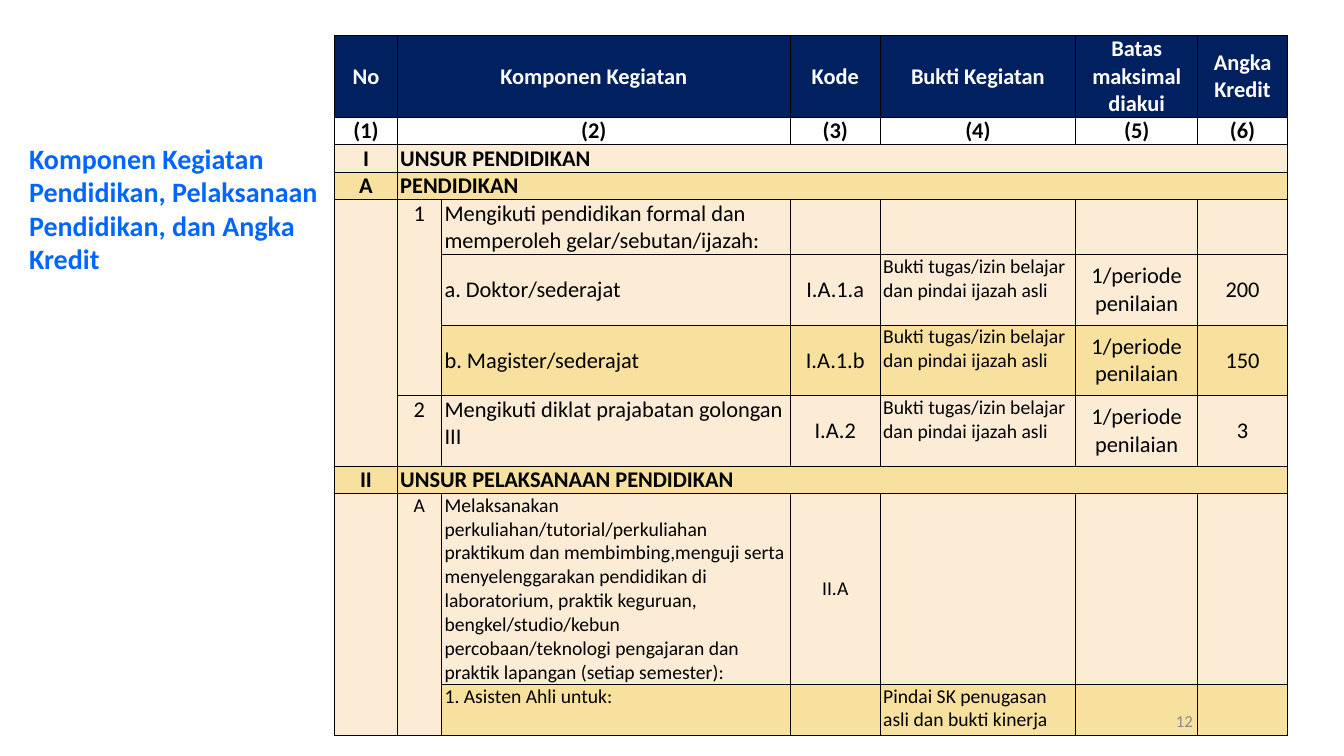
from dataclasses import dataclass, field

from lxml import etree
from pptx import Presentation
from pptx.dml.color import RGBColor
from pptx.enum.text import MSO_ANCHOR as Anchor, PP_ALIGN as Align
from pptx.oxml.ns import qn
from pptx.slide import Slide
from pptx.table import Table, _Cell as Cell
from pptx.text.text import _Paragraph as Paragraph
from pptx.util import Inches, Pt

NAVY, CREAM, GOLD = "002060", "FCECD5", "F8E19F"
BLACK, WHITE, BLUE, GRAY = "000000", "FFFFFF", "0066FF", "8C8C8C"
COLUMN_WIDTHS = [0.62, 0.44, 3.46, 0.89, 1.94, 1.21, 0.89]


@dataclass
class Entry:
    column: int
    text: str = ""
    size: int = 16
    bold: bool = False
    color: str = BLACK
    align: Align = Align.LEFT
    anchor: Anchor = Anchor.TOP
    row_span: int = 1
    column_span: int = 1


@dataclass
class Row:
    height: float
    fill: str
    entries: list[Entry] = field(default_factory=list)


@dataclass
class Label:
    text: str
    left: float
    top: float
    width: float
    height: float
    size: int
    color: str
    bold: bool
    align: Align
    anchor: Anchor


def rgb(value: str) -> RGBColor:
    return RGBColor.from_string(value)


def centered(column: int, text: str, **options) -> Entry:
    return Entry(column, text, align=Align.CENTER, **options)


def middle(column: int, text: str, **options) -> Entry:
    return centered(column, text, anchor=Anchor.MIDDLE, **options)


def captions(texts: list[str], color: str, anchor: Anchor) -> list[Entry]:
    return [centered(column, text, bold=True, color=color, anchor=anchor,
                     column_span=2 if column == 1 else 1)
            for column, text in zip([0, 1, 3, 4, 5, 6], texts)]


def section(height: float, fill: str, number: str, title: str) -> Row:
    return Row(height, fill, [centered(0, number, bold=True),
                              Entry(1, title, bold=True, column_span=6)])


def degree(fill: str, activity: list[Entry], code: str, credit: str) -> Row:
    return Row(0.7, fill, activity + [
        middle(3, code),
        Entry(4, "Bukti tugas/izin belajar dan pindai ijazah asli", 14),
        middle(5, "1/periode penilaian"),
        middle(6, credit),
    ])


ROWS = [
    Row(0.7, NAVY, captions(
        ["No", "Komponen Kegiatan", "Kode", "Bukti Kegiatan",
         "Batas maksimal diakui", "Angka Kredit"], WHITE, Anchor.MIDDLE)),
    Row(0.26, WHITE, captions(
        [f"({number})" for number in range(1, 7)], BLACK, Anchor.TOP)),
    section(0.26, CREAM, "I", "UNSUR PENDIDIKAN"),
    section(0.26, GOLD, "A", "PENDIDIKAN"),
    Row(0.53, CREAM, [
        Entry(0, row_span=4),
        centered(1, "1", row_span=3),
        Entry(2, "Mengikuti pendidikan formal dan memperoleh gelar/sebutan/ijazah:"),
    ]),
    degree(CREAM, [Entry(2, "a. Doktor/sederajat", anchor=Anchor.MIDDLE)],
           "I.A.1.a", "200"),
    degree(GOLD, [Entry(2, "b. Magister/sederajat", anchor=Anchor.MIDDLE)],
           "I.A.1.b", "150"),
    degree(CREAM, [centered(1, "2"),
                   Entry(2, "Mengikuti diklat prajabatan golongan III")],
           "I.A.2", "3"),
    section(0.23, GOLD, "II", "UNSUR PELAKSANAAN PENDIDIKAN"),
    Row(1.85, CREAM, [
        Entry(0, row_span=2),
        centered(1, "A", size=14, row_span=2),
        Entry(2, "Melaksanakan perkuliahan/tutorial/perkuliahan praktikum dan "
                 "membimbing,menguji serta menyelenggarakan pendidikan di "
                 "laboratorium, praktik keguruan, bengkel/studio/kebun "
                 "percobaan/teknologi pengajaran dan praktik lapangan "
                 "(setiap semester):", 14),
        middle(3, "II.A", size=14),
    ]),
    Row(0.51, GOLD, [
        Entry(2, "1. Asisten Ahli untuk:", 14),
        Entry(4, "Pindai SK penugasan asli dan bukti kinerja", 14),
    ]),
]

LABELS = [
    Label("Komponen Kegiatan Pendidikan, Pelaksanaan Pendidikan, dan Angka Kredit",
          0.19, 1.35, 3.1, 1.45, 20, BLUE, True, Align.LEFT, Anchor.TOP),
    Label("12", 9.78, 6.95, 2.15, 0.4, 12, GRAY, False, Align.RIGHT, Anchor.MIDDLE),
]


def write(paragraph: Paragraph, content: Entry | Label) -> None:
    paragraph.text = content.text
    paragraph.alignment = content.align
    formats = {"name": "Calibri", "size": Pt(content.size), "bold": content.bold}
    for attribute, value in formats.items():
        setattr(paragraph.font, attribute, value)
    paragraph.font.color.rgb = rgb(content.color)


def style_cell(cell: Cell, fill: str) -> None:
    margins = {"margin_left": Inches(0.03), "margin_right": Inches(0.03),
               "margin_top": 0, "margin_bottom": 0}
    for attribute, value in margins.items():
        setattr(cell, attribute, value)
    cell.fill.solid()
    cell.fill.fore_color.rgb = rgb(fill)
    properties = cell._tc.get_or_add_tcPr()
    for position, side in enumerate(["lnL", "lnR", "lnT", "lnB"]):
        border = etree.Element(qn(f"a:{side}"), w=str(Pt(1)))
        solid = etree.SubElement(border, qn("a:solidFill"))
        etree.SubElement(solid, qn("a:srgbClr"), val=BLACK)
        properties.insert(position, border)


def fill_row(table: Table, index: int, row: Row) -> None:
    table.rows[index].height = Inches(row.height)
    for column in range(len(COLUMN_WIDTHS)):
        style_cell(table.cell(index, column), row.fill)
    for entry in row.entries:
        cell = table.cell(index, entry.column)
        if entry.row_span > 1 or entry.column_span > 1:
            cell.merge(table.cell(index + entry.row_span - 1,
                                  entry.column + entry.column_span - 1))
        cell.vertical_anchor = entry.anchor
        if entry.text:
            write(cell.text_frame.paragraphs[0], entry)


def add_credit_table(slide: Slide) -> None:
    table = slide.shapes.add_table(
        len(ROWS), len(COLUMN_WIDTHS), Inches(3.32), Inches(0.35),
        Inches(sum(COLUMN_WIDTHS)), Inches(sum(row.height for row in ROWS))).table
    table.first_row = table.horz_banding = False
    for column, width in zip(table.columns, COLUMN_WIDTHS):
        column.width = Inches(width)
    for index, row in enumerate(ROWS):
        fill_row(table, index, row)


def add_label(slide: Slide, label: Label) -> None:
    frame = slide.shapes.add_textbox(
        Inches(label.left), Inches(label.top),
        Inches(label.width), Inches(label.height)).text_frame
    frame.word_wrap = True
    frame.vertical_anchor = label.anchor
    write(frame.paragraphs[0], label)


def main() -> None:
    deck = Presentation()
    deck.slide_width, deck.slide_height = Inches(13.33), Inches(7.5)
    slide = deck.slides.add_slide(deck.slide_layouts[6])
    add_credit_table(slide)
    for label in LABELS:
        add_label(slide, label)
    deck.save("out.pptx")


if __name__ == "__main__":
    main()
